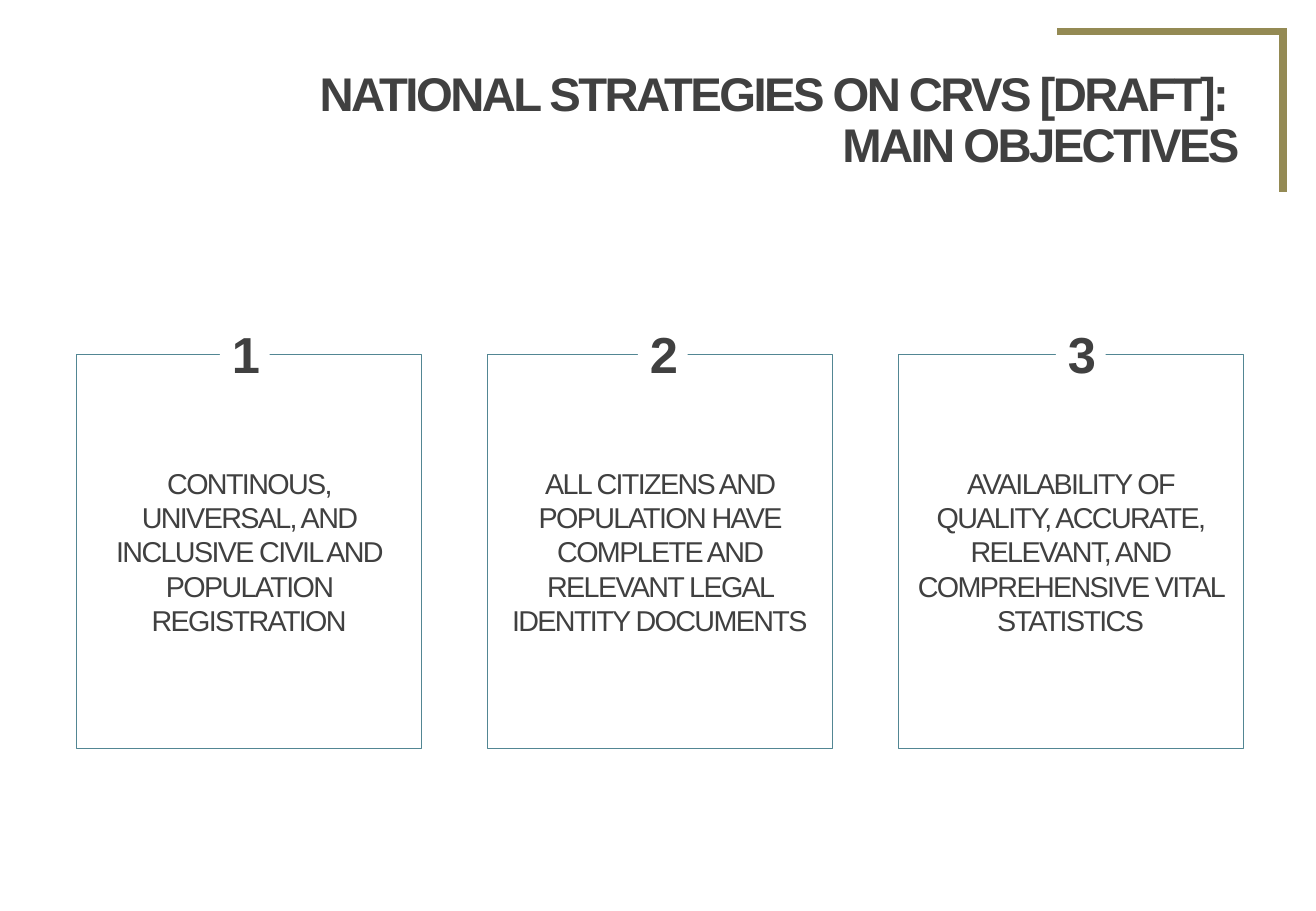
from copy import deepcopy
from dataclasses import dataclass

from lxml.etree import SubElement
from pptx import Presentation
from pptx.dml.color import RGBColor as RGB
from pptx.enum.shapes import MSO_CONNECTOR as CONN, MSO_SHAPE as SHAPE
from pptx.enum.text import MSO_ANCHOR as ANCHOR, MSO_AUTO_SIZE as AUTO, PP_ALIGN as ALIGN
from pptx.oxml.ns import qn
from pptx.util import Inches, Pt


@dataclass(frozen=True)
class Theme:
    font: str = "Arial"
    ink: RGB = RGB(0x40, 0x40, 0x40)
    paper: RGB = RGB(0xFF, 0xFF, 0xFF)
    border: RGB = RGB(0x52, 0x86, 0x93)
    accent: RGB = RGB(0x94, 0x8A, 0x54)
    title_size: float = 28
    number_size: float = 30
    body_size: float = 17
    heading_spacing: float = -1.5
    body_spacing: float = -1
    border_width: float = 0.5
    accent_width: float = 4.5


class SlideBuilder:
    def __init__(self, slide, theme):
        self.s = slide
        self.theme = theme

    def set_text(self, sp, text, size, spacing, align, bold=False):
        tf = sp.text_frame
        p = tf.paragraphs[0]
        p.text = text
        p.alignment = align
        for r in p.runs:
            r.font.name = self.theme.font
            r.font.size = Pt(size)
            r.font.bold = bold
            r.font.color.rgb = self.theme.ink
            r._r.get_or_add_rPr().set("spc", str(int(spacing * 100)))
        for br in p._p.findall(qn("a:br")):
            br.append(deepcopy(p.runs[0]._r.rPr))
        return tf

    def title(self, text, left, top, width, height):
        t = self.theme
        sp = self.s.shapes.title
        sp.left, sp.top = Inches(left), Inches(top)
        sp.width, sp.height = Inches(width), Inches(height)
        tf = self.set_text(sp, text, t.title_size, t.heading_spacing, ALIGN.RIGHT, True)
        tf.auto_size = AUTO.NONE
        tf.vertical_anchor = ANCHOR.MIDDLE
        tf.margin_left = tf.margin_right = Inches(0.09)
        tf.margin_top = tf.margin_bottom = Inches(0.04)
        tf.paragraphs[0].line_spacing = 0.9

    def box(self, left, top, width, height):
        sp = self.s.shapes.add_shape(
            SHAPE.RECTANGLE, Inches(left), Inches(top), Inches(width), Inches(height))
        sp.shadow.inherit = False
        return sp

    def card(self, text, left, top, width, height):
        t = self.theme
        sp = self.box(left, top, width, height)
        sp.fill.background()
        sp.line.color.rgb = t.border
        sp.line.width = Pt(t.border_width)
        tf = self.set_text(sp, text, t.body_size, t.body_spacing, ALIGN.CENTER)
        tf.word_wrap = True
        tf.vertical_anchor = ANCHOR.MIDDLE

    def number(self, text, left, top, width, height):
        t = self.theme
        sp = self.box(left, top, width, height)
        sp.fill.solid()
        sp.fill.fore_color.rgb = t.paper
        sp.line.fill.background()
        tf = self.set_text(sp, text, t.number_size, t.heading_spacing, ALIGN.LEFT, True)
        tf.word_wrap = False
        tf.auto_size = AUTO.SHAPE_TO_FIT_TEXT
        tf.vertical_anchor = ANCHOR.TOP

    def rule(self, x1, y1, x2, y2):
        t = self.theme
        c = self.s.shapes.add_connector(
            CONN.STRAIGHT, Inches(x1), Inches(y1), Inches(x2), Inches(y2))
        c.line.color.rgb = t.accent
        c.line.width = Pt(t.accent_width)
        SubElement(c._element.spPr, qn("a:effectLst"))


OBJECTIVES = [
    "CONTINOUS, UNIVERSAL, AND INCLUSIVE CIVIL AND POPULATION REGISTRATION",
    "ALL CITIZENS AND POPULATION HAVE COMPLETE AND RELEVANT LEGAL IDENTITY DOCUMENTS",
    "AVAILABILITY OF QUALITY, ACCURATE, RELEVANT, AND COMPREHENSIVE VITAL STATISTICS",
]
CARD_LEFT, CARD_PITCH = 0.63, 3.38
NUMBER_LEFT, NUMBER_PITCH = 1.81, 3.44


def main():
    prs = Presentation()
    prs.slide_width, prs.slide_height = Inches(10.83), Inches(7.5)
    b = SlideBuilder(prs.slides.add_slide(prs.slide_layouts[5]), Theme())

    b.title("NATIONAL STRATEGIES ON CRVS [DRAFT]: \vMAIN OBJECTIVES", 0.36, 0.5, 9.93, 1)
    b.rule(10.56, 1.58, 10.56, 0.25)
    b.rule(8.7, 0.26, 10.59, 0.26)
    for i, objective in enumerate(OBJECTIVES):
        b.card(objective, CARD_LEFT + i * CARD_PITCH, 2.92, 2.84, 3.24)
        b.number(str(i + 1), NUMBER_LEFT + i * NUMBER_PITCH, 2.61, 0.41, 0.61)

    prs.save("out.pptx")


if __name__ == "__main__":
    main()
